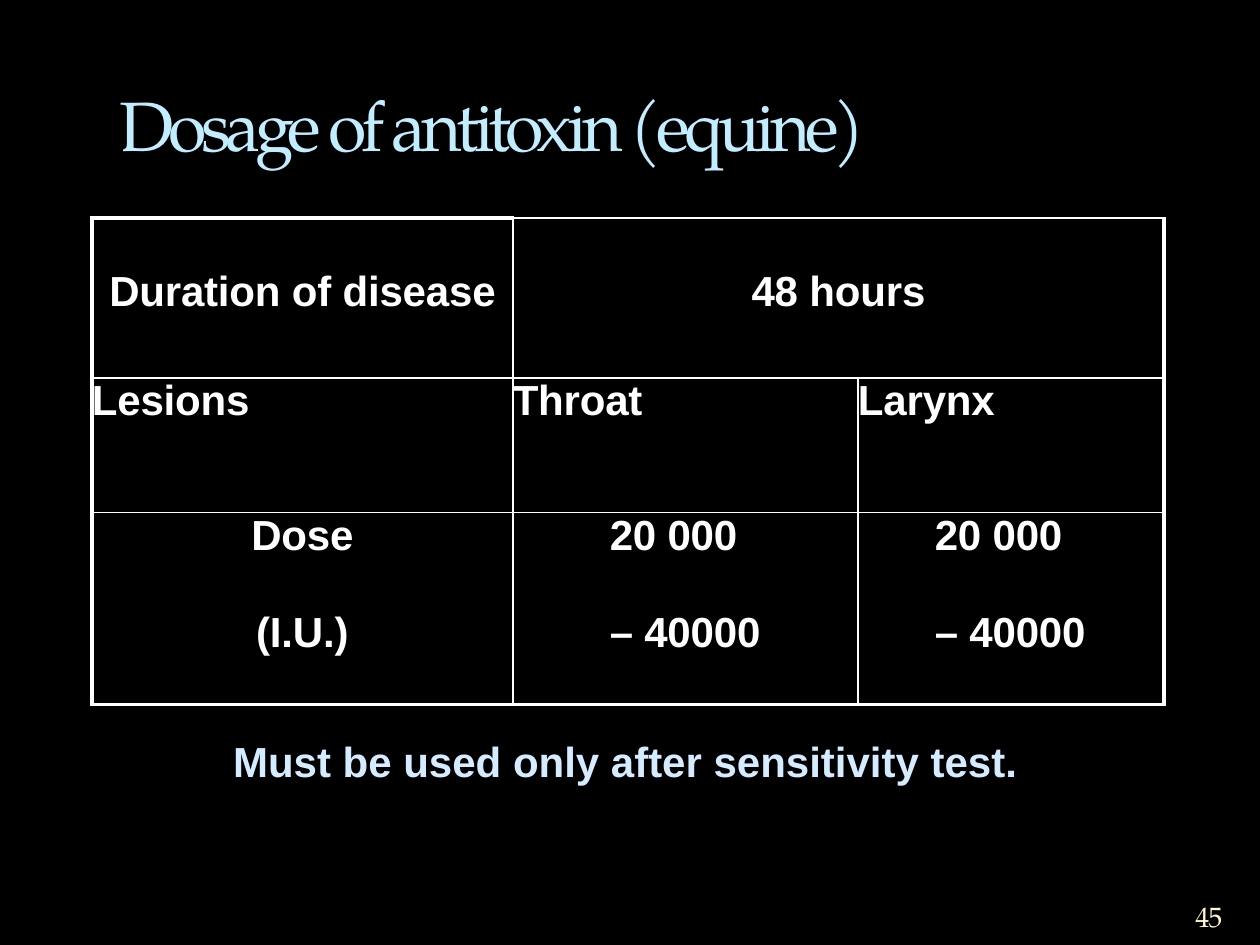
from lxml import etree
from pptx import Presentation, util as u
from pptx.dml.color import RGBColor
from pptx.enum import text
from pptx.oxml import ns

WHITE = "FFFFFF"
SERIF, SANS = "TeX Gyre Pagella", "Arial"
COLUMNS = (3.34, 2.74, 2.43)
ROWS = (1.27, 1.07, 0.77, 0.75)
DOSAGE = (
    ("Duration of disease", "48 hours", None),
    ("Lesions", "Throat", "Larynx"),
    ("Dose", "20 000", "20 000"),
    ("(I.U.)", "– 40000", "– 40000"),
)
SPACE_BEFORE = (0, 23, 22, 1)
DOSE_INDENTS = (0, 0.77, 0.61)
THIN, THICK = 1, 2.25


def colour(value):
    """Turn a hex string into a colour."""
    return RGBColor.from_string(value)


def style(paragraph, face, size, ink, bold=False, spacing=0):
    """Format a paragraph and its character spacing in points."""
    font = paragraph.font
    font.name, font.size, font.bold = face, u.Pt(size), bold
    font.color.rgb = colour(ink)
    for run in paragraph.runs:
        run._r.get_or_add_rPr().set("spc", str(round(spacing * 100)))


def set_margins(holder, left=0, top=0, right=0, bottom=0):
    """Set the inner margins of a cell or text frame in inches."""
    holder.margin_left, holder.margin_top = u.Inches(left), u.Inches(top)
    holder.margin_right, holder.margin_bottom = u.Inches(right), u.Inches(bottom)


def add_title(slide, box, wording):
    """Place the slide title in the given box."""
    title = slide.shapes.title
    title.left, title.top, title.width, title.height = map(u.Inches, box)
    frame = title.text_frame
    frame.text = wording
    frame.auto_size = text.MSO_AUTO_SIZE.NONE
    frame.vertical_anchor = text.MSO_ANCHOR.BOTTOM
    heading = frame.paragraphs[0]
    heading.alignment = text.PP_ALIGN.LEFT
    style(heading, SERIF, 40, "C1EDFF", spacing=-3)


def add_label(slide, box, wording, wrap=True, align=text.PP_ALIGN.LEFT,
              anchor=text.MSO_ANCHOR.TOP, **look):
    """Place one line of text without margins in the given box."""
    frame = slide.shapes.add_textbox(*map(u.Inches, box)).text_frame
    set_margins(frame)
    frame.word_wrap, frame.vertical_anchor = wrap, anchor
    frame.text = wording
    frame.paragraphs[0].alignment = align
    style(frame.paragraphs[0], **look)


def set_borders(cell, widths):
    """Draw the cell's left, right, top and bottom lines; zero hides one."""
    properties = cell._tc.get_or_add_tcPr()
    for side, width in zip("LRTB", widths):
        line = etree.SubElement(properties, ns.qn(f"a:ln{side}"), w=str(u.Pt(width)))
        if width:
            fill = etree.SubElement(line, ns.qn("a:solidFill"))
            etree.SubElement(fill, ns.qn("a:srgbClr"), val=WHITE)
        else:
            etree.SubElement(line, ns.qn("a:noFill"))


def border_widths(row, column):
    """Give a heavy outer frame and no line inside the dose row pair."""
    left = THIN if column else THICK
    right = THICK if column == 2 or (row == 0 and column == 1) else THIN
    top = THICK if (row, column) == (0, 0) else 0 if row == 3 else THIN
    bottom = (THIN, THIN, 0, THICK)[row]
    return left, right, top, bottom


def fill_cell(cell, row, column, wording):
    """Write and format one cell of the dosage table."""
    is_header, is_dose = row == 0, row >= 2
    set_margins(cell, left=DOSE_INDENTS[column] if is_dose else 0,
                bottom=0.1 if is_header else 0)
    cell.vertical_anchor = text.MSO_ANCHOR.MIDDLE if is_header else text.MSO_ANCHOR.TOP
    set_borders(cell, border_widths(row, column))
    cell.fill.background()
    if wording is None:
        return
    cell.text = wording
    entry = cell.text_frame.paragraphs[0]
    centred = is_header or (is_dose and column == 0)
    entry.alignment = text.PP_ALIGN.CENTER if centred else text.PP_ALIGN.LEFT
    entry.space_before = u.Pt(SPACE_BEFORE[row])
    style(entry, SANS, 24, WHITE, bold=True, spacing=-0.1)


def add_dosage_table(slide, left, top):
    """Build the dosage table from its column and row sizes."""
    table = slide.shapes.add_table(
        len(ROWS), len(COLUMNS), u.Inches(left), u.Inches(top),
        u.Inches(sum(COLUMNS)), u.Inches(sum(ROWS))).table
    table.first_row = table.horz_banding = False
    for column, width in zip(table.columns, COLUMNS):
        column.width = u.Inches(width)
    for row, height in zip(table.rows, ROWS):
        row.height = u.Inches(height)
    table.cell(0, 1).merge(table.cell(0, 2))
    for row, entries in enumerate(DOSAGE):
        for column, wording in enumerate(entries):
            fill_cell(table.cell(row, column), row, column, wording)


def main():
    """Build and save the antitoxin dosage slide."""
    deck = Presentation()
    deck.slide_width, deck.slide_height = u.Inches(10), u.Inches(7.5)
    slide = deck.slides.add_slide(deck.slide_layouts[5])
    slide.background.fill.solid()
    slide.background.fill.fore_color.rgb = colour("000000")
    add_title(slide, (0.85, 0.67, 8.2, 0.69), "Dosage of antitoxin (equine)")
    add_dosage_table(slide, 0.73, 1.73)
    add_label(slide, (1.85, 5.84, 6.25, 0.38),
              "Must be used only after sensitivity test.",
              face=SANS, size=24, ink="D5EBFF", bold=True)
    add_label(slide, (9.48, 7.19, 0.23, 0.17), "45", wrap=False,
              align=text.PP_ALIGN.CENTER, anchor=text.MSO_ANCHOR.MIDDLE,
              face=SERIF, size=16, ink="FEFAC9", spacing=-0.5)
    deck.save("out.pptx")


if __name__ == "__main__":
    main()
